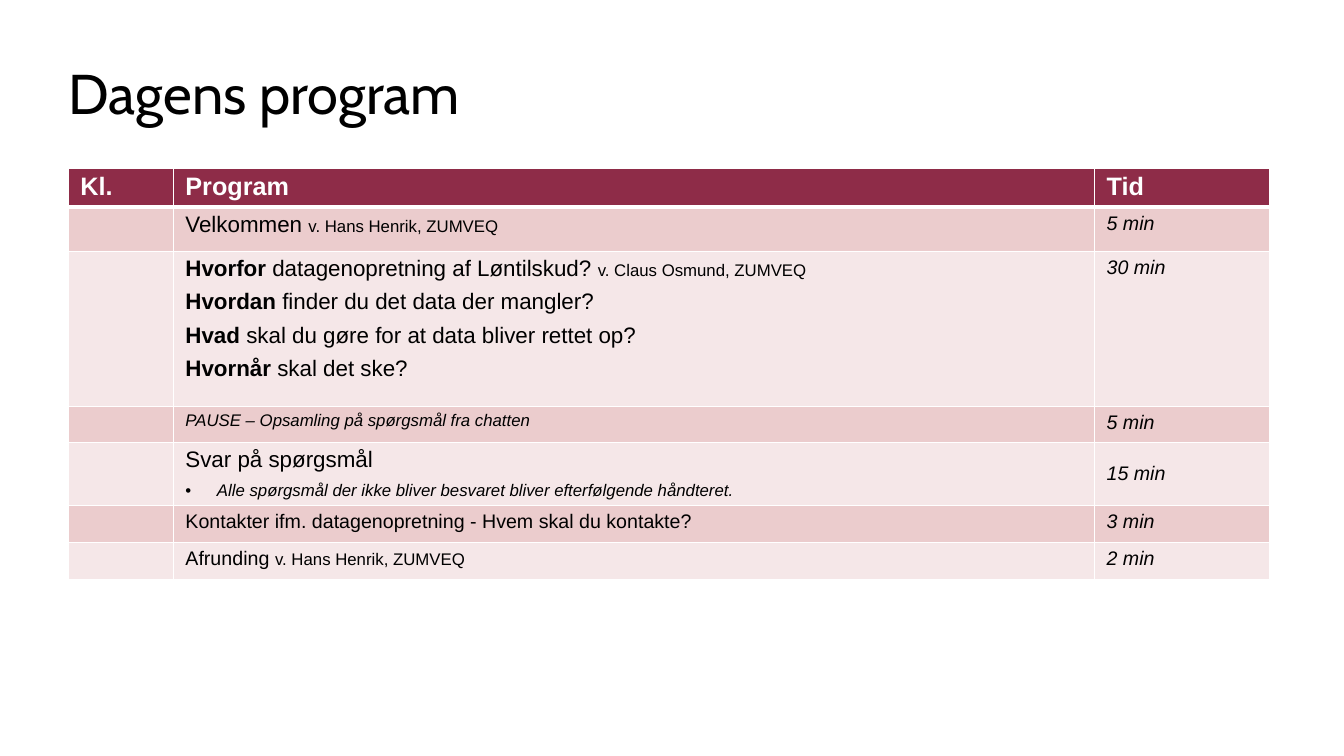
from dataclasses import dataclass
from itertools import product

from lxml import etree
from pptx import Presentation
from pptx import util as u
from pptx.dml.color import RGBColor
from pptx.enum import text
from pptx.oxml import ns

COLORS = {"white": "FFFFFF", "black": "000000", "header": "8E2C48",
          "dark band": "EBCCCD", "light band": "F5E7E8"}
LEFT, WIDTH = 49, 858
COL_WIDTHS = (75, 658, 125)
ORGANISER = "ZUMVEQ"


@dataclass
class Bit:
    text: str
    size: float = 16
    bold: bool = False
    italic: bool = False


@dataclass
class Line:
    bits: list[Bit]
    after: float = 6
    bullet: bool = False


@dataclass
class Item:
    height: float
    lines: list[Line]
    time: str
    middle: bool = False


def question(word: str, rest: str, *extra: Bit) -> Line:
    return Line([Bit(word, bold=True), Bit(rest), *extra])


def speaker(name: str) -> Bit:
    return Bit(f"v. {name}, {ORGANISER}", 12)


HEADER_HEIGHT = 28
HEADINGS = ("Kl.", "Program", "Tid")
ITEMS = [
    Item(31.5, [Line([Bit("Velkommen "), speaker("Hans Henrik")])], "5 min"),
    Item(111, [
        question("Hvorfor", " datagenopretning af Løntilskud? ", speaker("Claus Osmund")),
        question("Hvordan", " finder du det data der mangler?"),
        question("Hvad", " skal du gøre for at data bliver rettet op?"),
        question("Hvornår", " skal det ske?"),
    ], "30 min"),
    Item(25.7, [Line([Bit("PAUSE – Opsamling på spørgsmål fra chatten", 12, italic=True)])],
         "5 min"),
    Item(45, [
        Line([Bit("Svar på spørgsmål")]),
        Line([Bit("Alle spørgsmål der ikke bliver besvaret bliver efterfølgende håndteret.",
                  12, italic=True)], bullet=True),
    ], "15 min", middle=True),
    Item(26.5, [Line([Bit("Kontakter ifm. datagenopretning - Hvem skal du kontakte?", 14)],
                     after=0)], "3 min"),
    Item(26.5, [Line([Bit("Afrunding ", 14), speaker("Hans Henrik")], after=0)], "2 min"),
]


def rgb(name: str) -> RGBColor:
    return RGBColor.from_string(COLORS[name])


def style_font(font, name: str, size: float, color: str) -> None:
    font.name, font.size = name, u.Pt(size)
    font.color.rgb = rgb(color)


def add_bullet(p) -> None:
    pPr = p._p.get_or_add_pPr()
    pPr.set("marL", str(u.Pt(22.5)))
    pPr.set("indent", str(-u.Pt(22.5)))
    etree.SubElement(pPr, ns.qn("a:buFont")).set("typeface", "Arial")
    etree.SubElement(pPr, ns.qn("a:buChar")).set("char", "•")


def write_lines(tf, lines: list[Line], color: str) -> None:
    for i, line in enumerate(lines):
        p = tf.add_paragraph() if i else tf.paragraphs[0]
        if line.bullet:
            add_bullet(p)
        p.space_after = u.Pt(line.after)
        for bit in line.bits:
            r = p.add_run()
            r.text = bit.text
            style_font(r.font, "Arial", bit.size, color)
            r.font.bold, r.font.italic = bit.bold, bit.italic


def style_cell(cell, fill: str, bottom: float = 1, top: float = 1) -> None:
    tcPr = cell._tc.get_or_add_tcPr()
    for side, width in (("L", 1), ("R", 1), ("T", top), ("B", bottom)):
        ln = etree.SubElement(tcPr, ns.qn(f"a:ln{side}"), w=str(u.Pt(width)))
        solid = etree.SubElement(ln, ns.qn("a:solidFill"))
        etree.SubElement(solid, ns.qn("a:srgbClr"), val=COLORS["white"])
    cell.fill.solid()
    cell.fill.fore_color.rgb = rgb(fill)
    cell.margin_left = cell.margin_right = u.Pt(8.5)
    cell.margin_top = cell.margin_bottom = u.Pt(3.6)


def add_title(s) -> None:
    sp = s.shapes.title
    sp.left, sp.top, sp.width, sp.height = (u.Pt(v) for v in (LEFT, 36, WIDTH, 66))
    tf = sp.text_frame
    tf.text = "Dagens program"
    tf.auto_size = text.MSO_AUTO_SIZE.NONE
    tf.vertical_anchor = text.MSO_ANCHOR.TOP
    tf.margin_left = tf.margin_right = tf.margin_bottom = 0
    tf.margin_top = u.Pt(27)
    p = tf.paragraphs[0]
    p.alignment = text.PP_ALIGN.LEFT
    p.line_spacing = u.Pt(27)
    style_font(p.runs[0].font, "Cabin", 40, "black")


def add_program(s) -> None:
    heights = [HEADER_HEIGHT] + [item.height for item in ITEMS]
    table = s.shapes.add_table(len(heights), len(COL_WIDTHS), u.Pt(LEFT), u.Pt(120),
                               u.Pt(WIDTH), u.Pt(sum(heights))).table
    for column, width in zip(table.columns, COL_WIDTHS):
        column.width = u.Pt(width)
    for row, height in zip(table.rows, heights):
        row.height = u.Pt(height)

    # Fills and borders
    for i, j in product(range(len(heights)), range(len(COL_WIDTHS))):
        fill = "header" if i == 0 else "dark band" if i % 2 else "light band"
        style_cell(table.cell(i, j), fill, 3 if i == 0 else 1, 3 if i == 1 else 1)

    # Header row
    for j, heading in enumerate(HEADINGS):
        write_lines(table.cell(0, j).text_frame,
                    [Line([Bit(heading, 18, bold=True)], after=0)], "white")

    # Program rows; the empty clock cells need no vertical margins
    for i, item in enumerate(ITEMS, 1):
        clock, program, time = (table.cell(i, j) for j in range(3))
        clock.margin_top = clock.margin_bottom = 0
        write_lines(program.text_frame, item.lines, "black")
        write_lines(time.text_frame, [Line([Bit(item.time, 14, italic=True)])], "black")
        if item.middle:
            time.vertical_anchor = text.MSO_ANCHOR.MIDDLE


def main() -> None:
    prs = Presentation()
    prs.slide_width, prs.slide_height = u.Pt(960), u.Pt(540)
    s = prs.slides.add_slide(prs.slide_layouts[5])
    add_title(s)
    add_program(s)
    prs.save("out.pptx")


if __name__ == "__main__":
    main()
